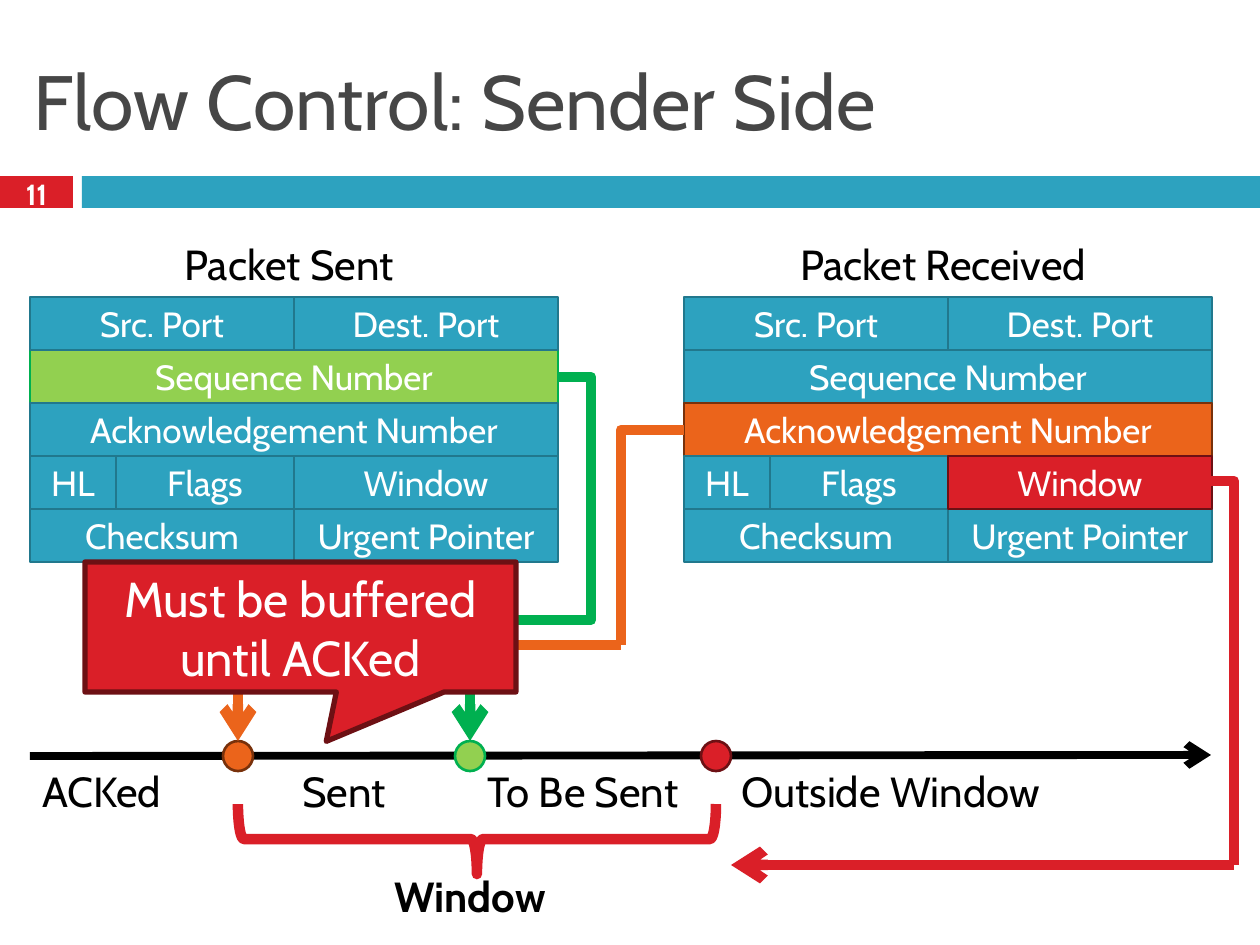
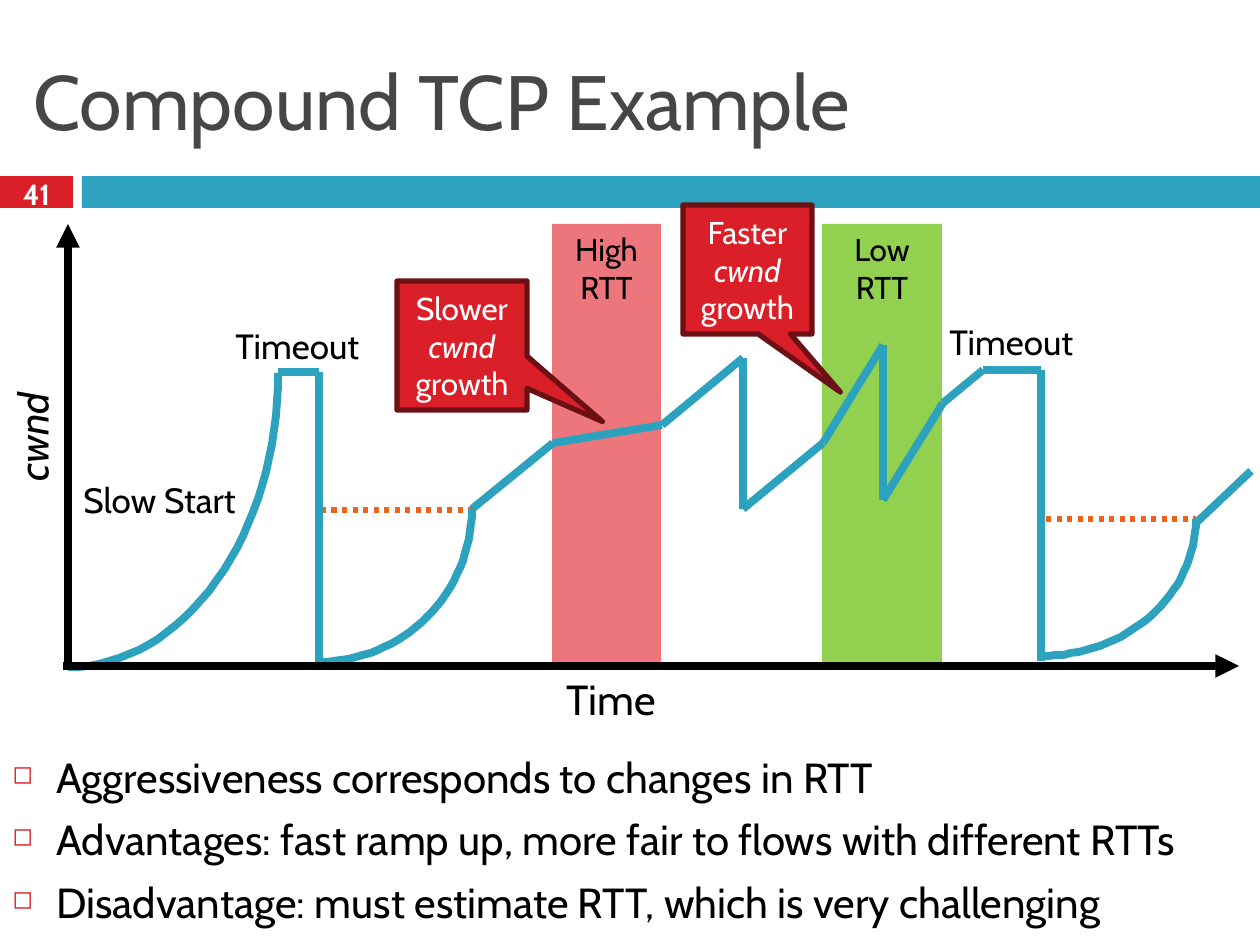
from math import cos, pi, sin

from lxml.etree import SubElement
from pptx import Presentation
from pptx.dml.color import RGBColor
from pptx.enum.dml import MSO_LINE
from pptx.enum.shapes import MSO_CONNECTOR, MSO_SHAPE
from pptx.enum.text import MSO_ANCHOR, MSO_AUTO_SIZE, PP_ALIGN
from pptx.oxml.ns import qn
from pptx.util import Emu, Pt

EMU_PER_PX = 914400 / 126
FONT = "Cabin"
BLACK, WHITE, TITLE_GREY = "000000", "FFFFFF", "464646"
BLUE, RED, ORANGE, GREEN, PINK = "2DA2BF", "DA1F28", "EB641B", "92D050", "EC767C"
DARK_BLUE, DARK_RED, DARK_ORANGE, DARK_GREEN = "21788D", "6D1014", "78310B", "00B050"

ROW_HEIGHT = 53
# name, row, left, width
HEADER_FIELDS = [
    ("Sequence Number", 1, 0, 528),
    ("Src. Port", 0, 0, 264),
    ("Dest. Port", 0, 264, 264),
    ("Acknowledgement Number", 2, 0, 528),
    ("Urgent Pointer", 4, 264, 264),
    ("Flags", 3, 86, 178),
    ("Checksum", 4, 0, 264),
    ("HL", 3, 0, 86),
    ("Window", 3, 264, 264),
]


def px(n):
    return Emu(round(n * EMU_PER_PX))


def rgb(color):
    return RGBColor.from_string(color)


def write(tf, text, size=24, color=BLACK, bold=False, align=PP_ALIGN.LEFT,
          anchor=MSO_ANCHOR.TOP, wrap=True):
    """Fill a text frame: one paragraph a line, *starred* parts in italics."""
    tf.word_wrap = wrap
    tf.auto_size = MSO_AUTO_SIZE.NONE
    tf.vertical_anchor = anchor
    for i, line in enumerate(text.split("\n")):
        p = tf.add_paragraph() if i else tf.paragraphs[0]
        p.alignment = align
        for j, part in enumerate(line.split("*")):
            if not part:
                continue
            r = p.add_run()
            r.text = part
            r.font.name, r.font.size = FONT, Pt(size)
            r.font.bold, r.font.italic = bold, j % 2 == 1
            r.font.color.rgb = rgb(color)


def add_text(s, x, y, w, h, text, **fmt):
    box = s.shapes.add_textbox(px(x), px(y), px(w), px(h))
    write(box.text_frame, text, **{"wrap": False, **fmt})
    return box


def paint(sp, fill=None, line=None, width=1.5):
    sp.shadow.inherit = False
    if fill:
        sp.fill.solid()
        sp.fill.fore_color.rgb = rgb(fill)
    else:
        sp.fill.background()
    if line:
        sp.line.color.rgb = rgb(line)
        sp.line.width = Pt(width)
    else:
        sp.line.fill.background()


def add_shape(s, kind, x, y, w, h, fill=None, line=None, width=1.5):
    sp = s.shapes.add_shape(kind, px(x), px(y), px(w), px(h))
    paint(sp, fill, line, width)
    return sp


def add_line(s, start, end, color, width=4.5, arrow=None, dash=None,
             kind=MSO_CONNECTOR.STRAIGHT):
    c = s.shapes.add_connector(kind, *map(px, start + end))
    c.line.color.rgb = rgb(color)
    c.line.width = Pt(width)
    if dash:
        c.line.dash_style = dash
    spPr = c._element.spPr
    if arrow:
        SubElement(spPr.find(qn("a:ln")), qn("a:tailEnd"), type=arrow)
    SubElement(spPr, qn("a:effectLst"))
    return c


def add_elbow(s, start, end, color, arrow=None):
    """Run across from start, then up or down to end."""
    c = add_line(s, start, end, color, 6, arrow, kind=MSO_CONNECTOR.ELBOW)
    c._element.spPr.find(qn("a:prstGeom")).set("prst", "bentConnector2")


def add_down_elbow(s, start, end, color, arrow=None):
    """Run down from start, across halfway, then down to end."""
    (x1, y1), (x2, y2) = start, end
    cx, cy = (x1 + x2) / 2, (y1 + y2) / 2
    half_w, half_h = abs(y2 - y1) / 2, abs(x2 - x1) / 2
    c = add_line(s, (cx - half_w, cy - half_h), (cx + half_w, cy + half_h),
                 color, 6, arrow, kind=MSO_CONNECTOR.ELBOW)
    c._element.spPr.find(qn("a:xfrm")).set("rot", str(90 * 60000))


def add_callout(s, x, y, w, h, tip, text, size):
    """Tip is the offset from the centre, as shares of width and height."""
    sp = add_shape(s, MSO_SHAPE.RECTANGULAR_CALLOUT, x, y, w, h, RED, DARK_RED, 3)
    sp.adjustments[0], sp.adjustments[1] = tip
    write(sp.text_frame, text, size=size, color=WHITE, align=PP_ALIGN.CENTER,
          anchor=MSO_ANCHOR.MIDDLE)


def add_slow_start(s, cx, cy, rx, ry, steps=32):
    """Draw the lower right quarter of an ellipse."""
    angles = [pi / 2 * i / steps for i in range(steps + 1)]
    points = [(cx + rx * cos(a), cy + ry * sin(a)) for a in angles]
    builder = s.shapes.build_freeform(*points[0], scale=EMU_PER_PX)
    builder.add_line_segments(points[1:], close=False)
    paint(builder.convert_to_shape(), line=BLUE, width=4.5)


def add_trace(s, points):
    for start, end in zip(points, points[1:]):
        add_line(s, start, end, BLUE)


def add_rtt_zone(s, x, w, color, text):
    sp = add_shape(s, MSO_SHAPE.RECTANGLE, x, 224, w, 442, color)
    write(sp.text_frame, text, size=18, align=PP_ALIGN.CENTER)


def add_packet(s, x, name, highlights):
    add_text(s, x + 87, 232, 344, 63, name, align=PP_ALIGN.CENTER)
    for field, row, left, width in HEADER_FIELDS:
        fill, line = highlights.get(field, (BLUE, DARK_BLUE))
        sp = add_shape(s, MSO_SHAPE.RECTANGLE, x + left, 297 + row * ROW_HEIGHT,
                       width, ROW_HEIGHT, fill, line)
        write(sp.text_frame, field, size=20, color=WHITE, align=PP_ALIGN.CENTER,
              anchor=MSO_ANCHOR.MIDDLE)


def add_bullets(s, x, y, w, h, text):
    box = add_text(s, x, y, w, h, text, wrap=True)
    for p in box.text_frame.paragraphs:
        p.space_before = Pt(7)
        pPr = p._p.get_or_add_pPr()
        pPr.set("marL", str(px(44)))
        pPr.set("indent", str(-px(44)))
        SubElement(SubElement(pPr, qn("a:buClr")), qn("a:srgbClr"), val=RED)
        SubElement(pPr, qn("a:buSzPct"), val="60000")
        SubElement(pPr, qn("a:buChar"), char="◻")


def start_slide(prs, title, number):
    s = prs.slides.add_slide(prs.slide_layouts[5])
    add_shape(s, MSO_SHAPE.RECTANGLE, 0, 176, 73, 32, RED)
    add_shape(s, MSO_SHAPE.RECTANGLE, 82, 176, 1178, 32, BLUE)
    t = s.shapes.title
    t.left, t.top, t.width, t.height = map(px, (21, 32, 1218, 136))
    write(t.text_frame, title, size=44, color=TITLE_GREY, anchor=MSO_ANCHOR.MIDDLE)
    add_text(s, 0, 173, 73, 42, number, size=16.6, color=WHITE, bold=True,
             align=PP_ALIGN.CENTER, anchor=MSO_ANCHOR.MIDDLE)
    return s


def build_flow_control(prs):
    s = start_slide(prs, "Flow Control: Sender Side", "11")
    add_packet(s, 30, "Packet Sent", {"Sequence Number": (GREEN, DARK_GREEN)})
    add_packet(s, 684, "Packet Received", {
        "Acknowledgement Number": (ORANGE, DARK_ORANGE),
        "Window": (RED, DARK_RED),
    })

    add_line(s, (30, 756), (1211, 755), BLACK, arrow="arrow")
    for x, w, label in [(30, 160, "ACKed"), (290, 112, "Sent"),
                        (475, 233, "To Be Sent"), (729, 334, "Outside Window")]:
        add_text(s, x, 759, w, 63, label)
    for cx, fill, line in [(238, ORANGE, DARK_ORANGE), (470, GREEN, DARK_GREEN),
                           (716, RED, DARK_RED)]:
        add_shape(s, MSO_SHAPE.OVAL, cx - 15, 741, 30, 30, fill, line)

    add_elbow(s, (684, 430), (621, 645), ORANGE)
    add_elbow(s, (621, 645), (238, 741), ORANGE, "arrow")
    add_elbow(s, (558, 377), (591, 499), DARK_GREEN)
    add_down_elbow(s, (591, 499), (470, 741), DARK_GREEN, "arrow")

    brace = add_shape(s, MSO_SHAPE.LEFT_BRACE, 442, 600, 70, 478, line=RED, width=6)
    brace.rotation = 270
    add_text(s, 376, 864, 188, 63, "Window", bold=True, align=PP_ALIGN.CENTER)
    add_elbow(s, (1211, 481), (1234, 865), RED)
    add_line(s, (1234, 865), (731, 865), RED, 6, "arrow")
    add_callout(s, 85, 562, 431, 130, (0.06, 0.88), "Must be buffered until ACKed", 28)


def build_compound_tcp(prs):
    s = start_slide(prs, "Compound TCP Example", "41")
    add_rtt_zone(s, 822, 120, GREEN, "Low\nRTT")
    add_rtt_zone(s, 552, 109, PINK, "High\nRTT")
    for x1, x2, y in [(1046, 1196, 519), (321, 474, 510)]:
        add_line(s, (x1, y), (x2, y), ORANGE, 3, dash=MSO_LINE.ROUND_DOT)

    add_text(s, 554, 667, 118, 64, "Time")
    add_text(s, -30, 399, 125, 64, "*cwnd*").rotation = 270
    for x, y, w, label in [(223, 318, 152, "Timeout"), (71, 472, 186, "Slow Start"),
                           (937, 314, 152, "Timeout")]:
        add_text(s, x, y, w, 55, label, size=20)

    add_slow_start(s, 68, 373, 210, 294)
    add_trace(s, [(278, 372), (319, 372), (319, 663)])
    add_slow_start(s, 319, 509, 153, 153)
    add_trace(s, [(472, 509), (553, 443), (662, 425), (743, 358), (743, 509),
                  (823, 443), (883, 345), (883, 500), (943, 403), (983, 370),
                  (1041, 370), (1041, 661)])
    add_slow_start(s, 1041, 519, 155, 137)
    add_trace(s, [(1196, 523), (1251, 471)])

    add_line(s, (68, 666), (68, 224), BLACK, arrow="triangle")
    add_line(s, (63, 666), (1239, 666), BLACK, arrow="triangle")
    add_callout(s, 397, 281, 130, 129, (1.08, 0.59), "Slower *cwnd* growth", 18)
    add_callout(s, 683, 205, 129, 129, (0.72, 0.95), "Faster *cwnd* growth", 18)
    add_bullets(s, 0, 745, 1260, 200,
                "Aggressiveness corresponds to changes in RTT\n"
                "Advantages: fast ramp up, more fair to flows with different RTTs\n"
                "Disadvantage: must estimate RTT, which is very challenging")


def main():
    prs = Presentation()
    prs.slide_width, prs.slide_height = px(1260), px(945)
    build_flow_control(prs)
    build_compound_tcp(prs)
    prs.save("out.pptx")


if __name__ == "__main__":
    main()
